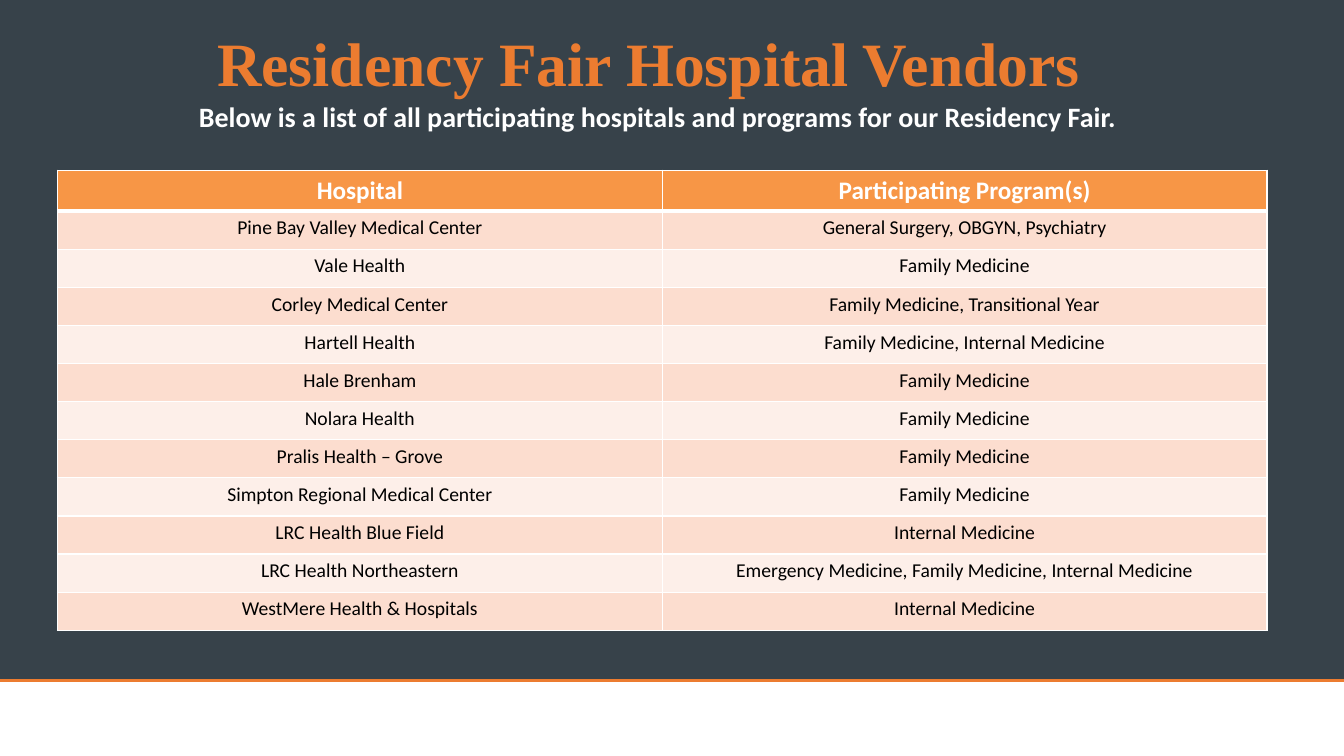
from lxml.etree import SubElement
from pptx import Presentation
from pptx.dml.color import RGBColor
from pptx.enum.shapes import MSO_CONNECTOR, MSO_SHAPE
from pptx.enum.text import MSO_ANCHOR, MSO_AUTO_SIZE, PP_ALIGN
from pptx.oxml.ns import qn
from pptx.util import Cm, Pt

SLATE = RGBColor(0x37, 0x42, 0x4A)
ORANGE = RGBColor(0xEC, 0x7C, 0x30)
HEADER = RGBColor(0xF7, 0x96, 0x46)
PEACH = RGBColor(0xFC, 0xDD, 0xCF)
CREAM = RGBColor(0xFD, 0xEF, 0xE9)
WHITE = RGBColor(0xFF, 0xFF, 0xFF)
BLACK = RGBColor(0, 0, 0)

WIDTH, HEIGHT, PANEL_HEIGHT = 33.87, 19.05, 17.15

VENDORS = [
    ("Hospital", "Participating Program(s)"),
    ("Pine Bay Valley Medical Center", "General Surgery, OBGYN, Psychiatry"),
    ("Vale Health", "Family Medicine"),
    ("Corley Medical Center", "Family Medicine, Transitional Year"),
    ("Hartell Health", "Family Medicine, Internal Medicine"),
    ("Hale Brenham", "Family Medicine"),
    ("Nolara Health", "Family Medicine"),
    ("Pralis Health – Grove", "Family Medicine"),
    ("Simpton Regional Medical Center", "Family Medicine"),
    ("LRC Health Blue Field", "Internal Medicine"),
    ("LRC Health Northeastern", "Emergency Medicine, Family Medicine, Internal Medicine"),
    ("WestMere Health & Hospitals", "Internal Medicine"),
]


class VendorSlide:
    """Holds the slide and its style, and adds each kind of element."""

    body_font = "Calibri"
    title_font = "Times New Roman"

    def __init__(self, prs):
        self.s = prs.slides.add_slide(prs.slide_layouts[5])

    def style(self, p, size, color, bold, font=None, align=PP_ALIGN.CENTER):
        p.alignment = align
        for r in p.runs:
            r.font.name = font or self.body_font
            r.font.size = Pt(size)
            r.font.bold = bold
            r.font.color.rgb = color

    def frame(self, sp, text, left_inset=0):
        tf = sp.text_frame
        tf.text = text
        tf.word_wrap = True
        tf.auto_size = MSO_AUTO_SIZE.NONE
        tf.vertical_anchor = MSO_ANCHOR.TOP
        tf.margin_left = Cm(left_inset)
        tf.margin_top = tf.margin_right = tf.margin_bottom = 0
        return tf.paragraphs[0]

    def panel(self, top, height, color):
        sp = self.s.shapes.add_shape(
            MSO_SHAPE.RECTANGLE, 0, Cm(top), Cm(WIDTH), Cm(height))
        sp.shadow.inherit = False
        sp.fill.solid()
        sp.fill.fore_color.rgb = color
        sp.line.fill.background()

    def rule(self, y, color, width):
        line = self.s.shapes.add_connector(
            MSO_CONNECTOR.STRAIGHT, 0, Cm(y), Cm(WIDTH), Cm(y))
        line.line.color.rgb = color
        line.line.width = Pt(width)
        SubElement(line._element.spPr, qn("a:effectLst"))

    def title(self, text, left, top, width, height):
        sp = self.s.shapes.title
        self.s.shapes._spTree.append(sp._element)
        sp.left, sp.top, sp.width, sp.height = map(Cm, (left, top, width, height))
        p = self.frame(sp, text)
        p.line_spacing = Pt(52.6)
        self.style(p, 44, ORANGE, True, self.title_font, PP_ALIGN.LEFT)

    def subtitle(self, text, left, top, width, height):
        sp = self.s.shapes.add_textbox(*map(Cm, (left, top, width, height)))
        self.style(self.frame(sp, text, 0.81), 20, WHITE, True)

    def borders(self, cell, **widths):
        tc_pr = cell._tc.get_or_add_tcPr()
        for i, side in enumerate("LRTB"):
            width = Pt(widths.get(side, 1))
            ln = tc_pr.makeelement(qn(f"a:ln{side}"), {"w": str(width)})
            fill = SubElement(ln, qn("a:solidFill"))
            SubElement(fill, qn("a:srgbClr"), val=str(WHITE))
            tc_pr.insert(i, ln)

    def table(self, rows, left, top, width, header_height, row_height):
        height = header_height + row_height * (len(rows) - 1)
        table = self.s.shapes.add_table(
            len(rows), len(rows[0]), *map(Cm, (left, top, width, height))).table
        for i, values in enumerate(rows):
            header = i == 0
            table.rows[i].height = Cm(header_height if header else row_height)
            color = HEADER if header else (CREAM, PEACH)[i % 2]
            for cell, value in zip(table.rows[i].cells, values):
                cell.text = value
                cell.fill.solid()
                cell.fill.fore_color.rgb = color
                self.borders(cell, T=3 if i == 1 else 1, B=3 if header else 1)
                self.style(cell.text_frame.paragraphs[0], 18 if header else 14,
                           WHITE if header else BLACK, header)


def main():
    prs = Presentation()
    prs.slide_width, prs.slide_height = Cm(WIDTH), Cm(HEIGHT)
    slide = VendorSlide(prs)
    slide.panel(0, PANEL_HEIGHT, SLATE)
    slide.panel(PANEL_HEIGHT, HEIGHT - PANEL_HEIGHT, WHITE)
    slide.rule(PANEL_HEIGHT, ORANGE, 2.25)
    slide.title("Residency Fair Hospital Vendors", 5.47, 0.64, 22.45, 1.88)
    slide.subtitle(
        "Below is a list of all participating hospitals and programs for our Residency Fair.",
        0.84, 2.51, 30.66, 0.86)
    slide.table(VENDORS, 1.45, 4.29, 30.48, 1.03, 0.96)
    prs.save("out.pptx")


if __name__ == "__main__":
    main()
